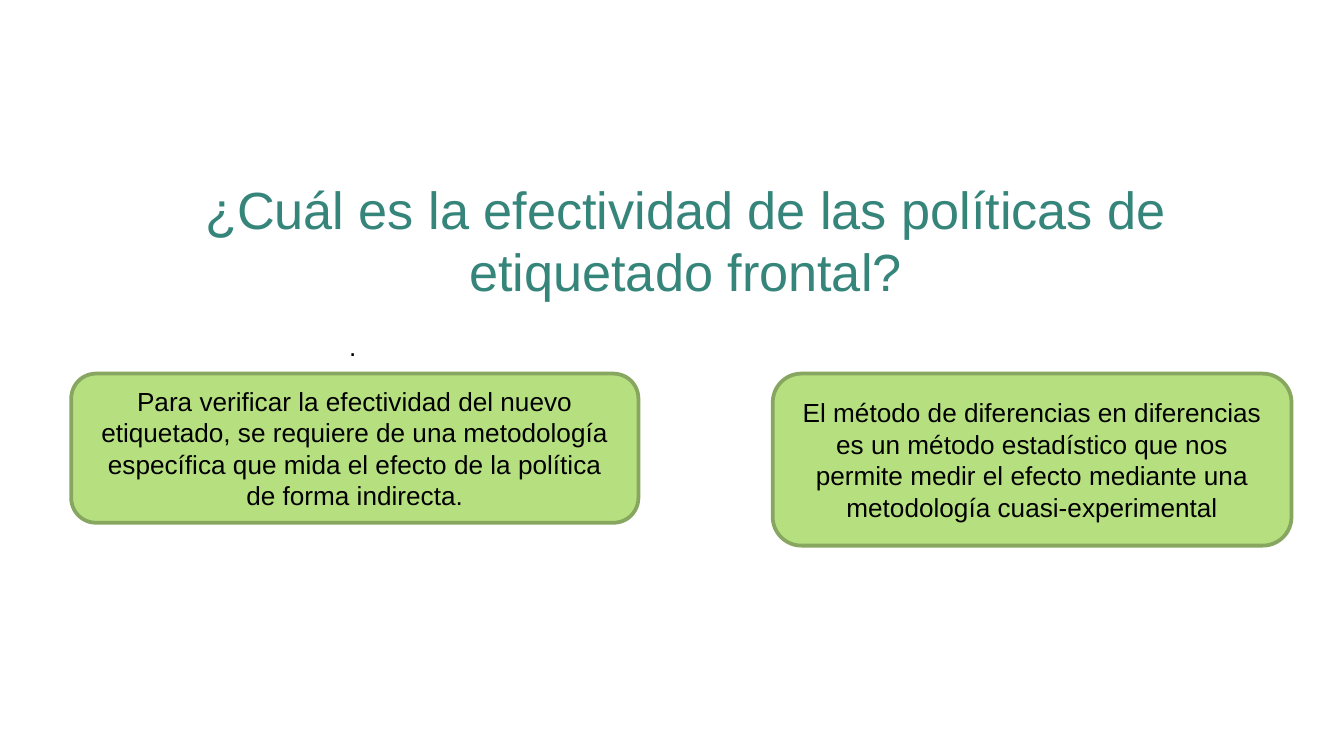
import pptx
import pptx.dml.color
import pptx.enum.shapes
import pptx.enum.text
import pptx.util

W = 10
H = W * 9 / 16
FONT = "Arial"
TEAL, GREEN, OLIVE, BLACK = "36857B", "B6E080", "87A65F", "000000"
CARD_TOP = 2.78
CARDS = [
    (0.53, 4.22, 1.11,
     "Para verificar la efectividad del nuevo etiquetado, se requiere de una "
     "metodología específica que mida el efecto de la política de forma indirecta."),
    (5.75, 3.86, 1.28,
     "El método de diferencias en diferencias es un método estadístico que nos "
     "permite medir el efecto mediante una metodología cuasi-experimental"),
]
ALIGN = pptx.enum.text.PP_ALIGN
ANCHOR = pptx.enum.text.MSO_ANCHOR


def rgb(code):
    return pptx.dml.color.RGBColor.from_string(code)


def box(x, y, w, h):
    """Turn inches into the four lengths of a shape's frame."""
    return [pptx.util.Inches(v) for v in (x, y, w, h)]


def write(sp, text, size, color, align, anchor):
    tf = sp.text_frame
    tf.word_wrap = True
    tf.vertical_anchor = anchor
    p = tf.paragraphs[0]
    p.alignment = align
    r = p.add_run()
    r.text = text
    r.font.name = FONT
    r.font.size = pptx.util.Pt(size)
    r.font.color.rgb = rgb(color)
    return tf


def add_title(s, text):
    sp = s.shapes.add_textbox(*box(1.08, 0.5, 8.04, 2.31))
    tf = write(sp, text, 28, TEAL, ALIGN.CENTER, ANCHOR.BOTTOM)
    tf.margin_left = tf.margin_right = tf.margin_top = pptx.util.Inches(0.1)
    tf.margin_bottom = pptx.util.Inches(0.56)


def add_card(s, x, w, h, text):
    kind = pptx.enum.shapes.MSO_SHAPE.ROUNDED_RECTANGLE
    sp = s.shapes.add_shape(kind, *box(x, CARD_TOP, w, h))
    sp.shadow.inherit = False
    sp.fill.solid()
    sp.fill.fore_color.rgb = rgb(GREEN)
    sp.line.color.rgb = rgb(OLIVE)
    sp.line.width = pptx.util.Pt(2)
    write(sp, text, 14, BLACK, ALIGN.CENTER, ANCHOR.MIDDLE)


def add_note(s, text):
    sp = s.shapes.add_textbox(*box(W / 4, 2.41, W / 2, 0.34))
    write(sp, text, 14, BLACK, ALIGN.LEFT, ANCHOR.TOP)


def main():
    prs = pptx.Presentation()
    prs.slide_width = pptx.util.Inches(W)
    prs.slide_height = pptx.util.Inches(H)
    s = prs.slides.add_slide(prs.slide_layouts[6])
    add_title(s, "¿Cuál es la efectividad de las políticas de etiquetado frontal?")
    first, second = CARDS
    add_card(s, *first)
    add_note(s, ".")
    add_card(s, *second)
    prs.save("out.pptx")


if __name__ == "__main__":
    main()
